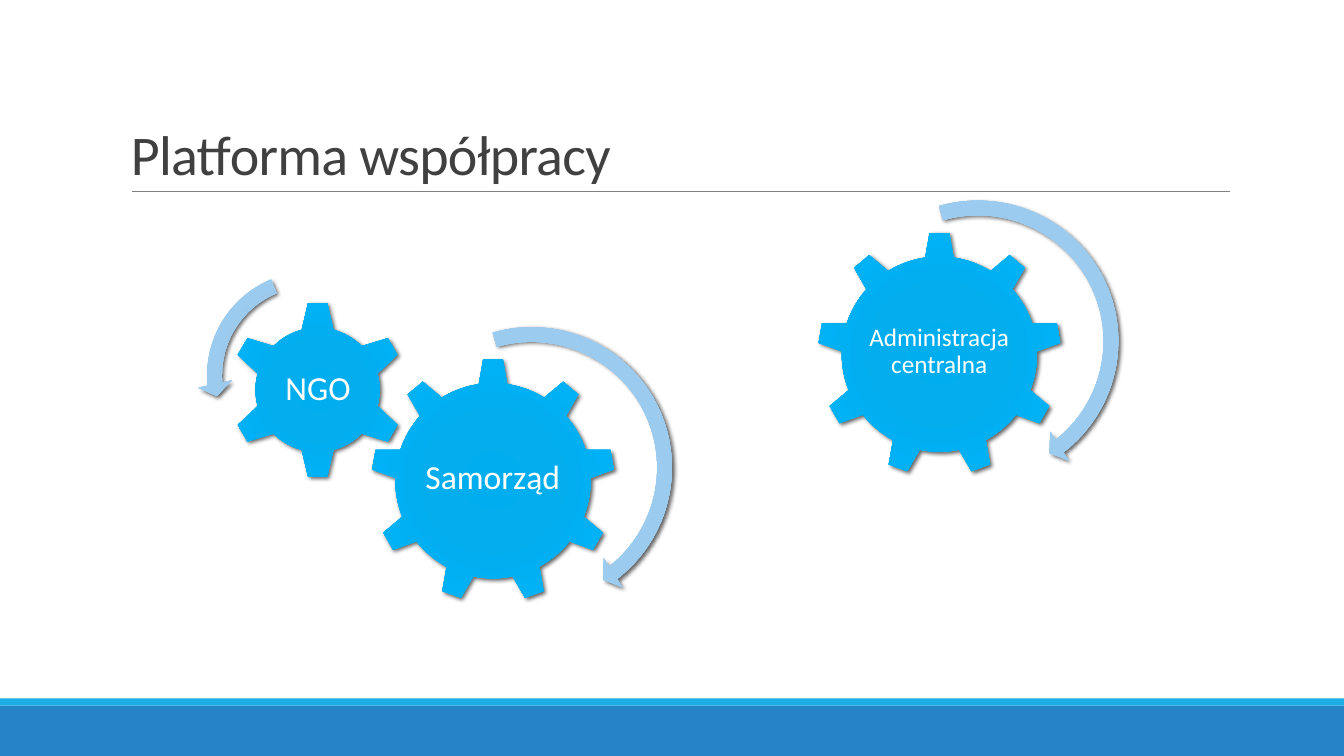
import pptx
import pptx.util
import pptx.dml.color
import pptx.enum.shapes
import pptx.enum.text
import pptx.oxml

Cm, Pt = pptx.util.Cm, pptx.util.Pt
KIND = pptx.enum.shapes.MSO_SHAPE
ALIGN = pptx.enum.text.PP_ALIGN
ANCHOR = pptx.enum.text.MSO_ANCHOR
NS = 'xmlns:a="http://schemas.openxmlformats.org/drawingml/2006/main"'

# Content: lengths in cm
TITLE = "Platforma współpracy"
WIDE, HIGH = 33.87, 19.05
BARS = [(17.78, 1.27, "2683C6"), (17.6, 0.18, "1CADE4")]
STOPS = [0, 34, 70, 100]
BLUE = ["00ADEF", "03ADEE", "00B1F5", "12B1EE"]
PALE = ["97C6E8", "9AC8E9", "9BCBEE", "A9D3F3"]

# Label and arrow boxes are offsets from the gear's corner, then size
LARGE = {
    "kind": KIND.GEAR_9, "size": 6.15, "label": (1.21, 1.45, 3.72, 3.15),
    "arrow": KIND.CIRCULAR_ARROW, "turn": (0.26, -1.04, 7.57),
    "adj": [0.049, 3.126, 31.3, 152.386, 0.057],
}
SMALL = {
    "kind": KIND.GEAR_6, "size": 4.47, "label": (1.14, 1.12, 2.21, 2.21),
    "arrow": KIND.LEFT_CIRCULAR_ARROW, "turn": (-0.79, -0.99, 5.72),
    "adj": [0.065, 4.3, 104.891, 148.378, 0.075],
}
GEARS = [
    ("Samorząd", 24, 9.35, 9.04, LARGE),
    ("NGO", 24, 5.77, 7.59, SMALL),
    ("Administracja centralna", 18, 20.6, 5.85, LARGE),
]

deck = pptx.Presentation()
deck.slide_width, deck.slide_height = Cm(WIDE), Cm(HIGH)
slide = deck.slides.add_slide(deck.slide_layouts[6])
shapes = slide.shapes


def paint(target, code):
    """Give a fill, line or font a solid colour."""
    if hasattr(target, "solid"):
        target.solid()
        target = target.fore_color
    else:
        target = target.color
    target.rgb = pptx.dml.color.RGBColor.from_string(code)


def write(text, x, y, w, h, size=24, color="FFFFFF", align=ALIGN.CENTER,
          anchor=ANCHOR.MIDDLE, inset=0.06, lead=0.9, track=0):
    frame = shapes.add_textbox(Cm(x), Cm(y), Cm(w), Cm(h)).text_frame
    frame.word_wrap = True
    frame.vertical_anchor = anchor
    frame.margin_left = frame.margin_right = Cm(inset)
    frame.margin_top = frame.margin_bottom = Cm(min(inset, 0.13))
    para = frame.paragraphs[0]
    para.alignment, para.line_spacing = align, lead
    run = para.add_run()
    run.text = text
    run.font.name, run.font.size = "Calibri", Pt(size)
    paint(run.font, color)
    if track:
        run.font._element.set("spc", str(int(track * 100)))


def draw(kind, x, y, w, h):
    shape = shapes.add_shape(kind, Cm(x), Cm(y), Cm(w), Cm(h))
    shape.shadow.inherit = False
    shape.line.fill.background()
    return shape


def shade(shape, tones):
    """Add a radial gradient and a soft shadow."""
    stops = "".join(
        f'<a:gs pos="{pos * 1000}"><a:srgbClr val="{tone}"/></a:gs>'
        for pos, tone in zip(STOPS, tones))
    grad = pptx.oxml.parse_xml(
        f'<a:gradFill {NS} rotWithShape="1"><a:gsLst>{stops}</a:gsLst>'
        '<a:path path="circle"><a:fillToRect l="100000" t="100000" '
        'r="100000" b="100000"/></a:path></a:gradFill>')
    cast = pptx.oxml.parse_xml(
        f'<a:outerShdw {NS} blurRad="{Pt(3)}" dist="{Pt(2)}" dir="2700000" '
        'rotWithShape="0"><a:srgbClr val="000000"><a:alpha val="60000"/>'
        '</a:srgbClr></a:outerShdw>')
    props = shape._element.spPr
    props.find(pptx.oxml.ns.qn("a:prstGeom")).addnext(grad)
    props.find(pptx.oxml.ns.qn("a:effectLst")).append(cast)


# Footer bars
for top, tall, code in BARS:
    paint(draw(KIND.RECTANGLE, 0, top, WIDE, tall).fill, code)

# Title and rule
rule = shapes.add_connector(pptx.enum.shapes.MSO_CONNECTOR.STRAIGHT,
                            Cm(3.33), Cm(4.83), Cm(31), Cm(4.83))
rule.line.width = Pt(0.5)
paint(rule.line, "808080")
rule._element.spPr.append(pptx.oxml.parse_xml(f"<a:effectLst {NS}/>"))
write(TITLE, 3.05, 0.79, 27.94, 4.04, size=40, color="404040",
      align=ALIGN.LEFT, anchor=ANCHOR.BOTTOM, inset=0.25, lead=0.85,
      track=-0.5)

# Gears with labels and turning arrows
for name, size, x, y, form in GEARS:
    shade(draw(form["kind"], x, y, form["size"], form["size"]), BLUE)
    dx, dy, w, h = form["label"]
    write(name, x + dx, y + dy, w, h, size=size)
    dx, dy, span = form["turn"]
    arrow = draw(form["arrow"], x + dx, y + dy, span, span)
    for i, value in enumerate(form["adj"]):
        arrow.adjustments[i] = value
    shade(arrow, PALE)

deck.save("out.pptx")
